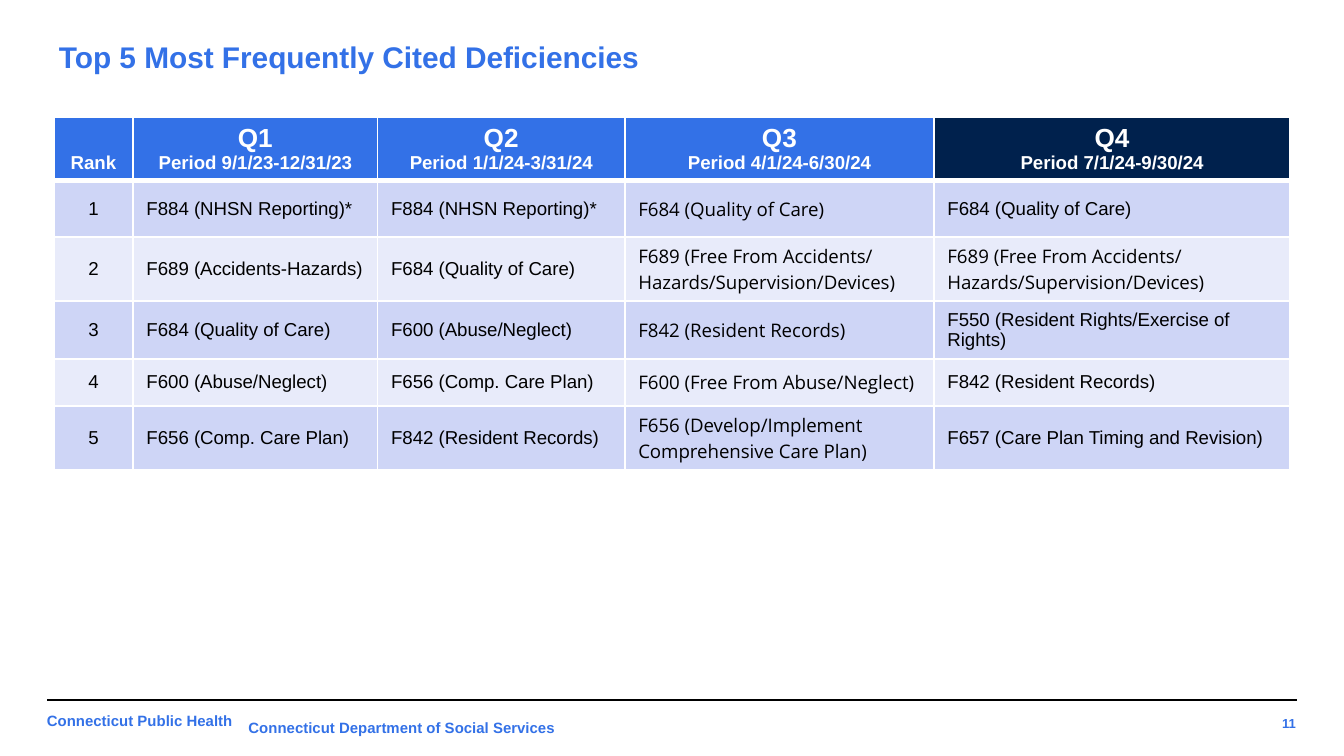
"""Build the slide on the most cited deficiencies by quarter."""
from lxml import etree
from pptx import Presentation
from pptx.dml.color import RGBColor
from pptx.enum.shapes import MSO_CONNECTOR
from pptx.enum.text import MSO_ANCHOR, PP_ALIGN
from pptx.oxml.ns import qn
from pptx.util import Inches, Pt

LEFT, CENTER, RIGHT = PP_ALIGN.LEFT, PP_ALIGN.CENTER, PP_ALIGN.RIGHT
TOP, MIDDLE, BOTTOM = MSO_ANCHOR.TOP, MSO_ANCHOR.MIDDLE, MSO_ANCHOR.BOTTOM
LINE = MSO_CONNECTOR.STRAIGHT


class Theme:
    """Colours, fonts and type sizes."""
    blue, navy, white, black = "3371E7", "00214D", "FFFFFF", "000000"
    head_fills = [blue] * 4 + [navy]
    bands = ["CED5F6", "E8EBFA"]
    font, alt = "Arial", "Open Sans"
    title, quarter, body, foot, page = 16, 14, 10, 8, 7


HEADS = [
    ["Rank"],
    ["Q1", "Period 9/1/23-12/31/23"],
    ["Q2", "Period 1/1/24-3/31/24"],
    ["Q3", "Period 4/1/24-6/30/24"],
    ["Q4", "Period 7/1/24-9/30/24"],
]
RANKS = [
    ["F884 (NHSN Reporting)*", "F884 (NHSN Reporting)*",
     "F684 (Quality of Care)", "F684 (Quality of Care)"],
    ["F689 (Accidents-Hazards)", "F684 (Quality of Care)",
     "F689 (Free From Accidents/ Hazards/Supervision/Devices)",
     "F689 (Free From Accidents/ Hazards/Supervision/Devices)"],
    ["F684 (Quality of Care)", "F600 (Abuse/Neglect)",
     "F842 (Resident Records)", "F550 (Resident Rights/Exercise of Rights)"],
    ["F600 (Abuse/Neglect)", "F656 (Comp. Care Plan)",
     "F600 (Free From Abuse/Neglect)", "F842 (Resident Records)"],
    ["F656 (Comp. Care Plan)", "F842 (Resident Records)",
     "F656 (Develop/Implement \nComprehensive Care Plan)",
     "F657 (Care Plan Timing and Revision)"],
]
ALT_CELLS = {(1, 3), (2, 3), (2, 4), (3, 3), (4, 3), (5, 3)}
WIDTHS = [0.59, 1.82, 1.84, 2.3, 2.65]
HEIGHTS = [0.27, 0.42, 0.27, 0.43, 0.35, 0.27]
FRAME = (0.4, 0.87, 9.2, 2.57)
# text, box, size, align, anchor, inset, wrap, spacing
LABELS = [
    ("11", (9.14, 5.26, 0.6, 0.25), Theme.page, RIGHT, MIDDLE, 0.1, True, 1),
    ("Connecticut Public Health", (0.25, 5.25, 3.28, 0.34), Theme.foot,
     LEFT, TOP, 0.1, True, 0.9),
    ("Top 5 Most Frequently Cited Deficiencies", (0.34, 0.26, 9.32, 0.33),
     Theme.title, LEFT, MIDDLE, 0.1, True, 1),
    ("Connecticut Department of Social Services", (1.75, 5.3, 2.51, 0.24),
     Theme.foot, LEFT, TOP, None, False, 1),
]


def style(para, size, color, bold, align, font=Theme.font):
    """Set the font and alignment of a paragraph."""
    para.alignment = align
    para.font.size, para.font.name, para.font.bold = Pt(size), font, bold
    para.font.color.rgb = RGBColor.from_string(color)


def label(slide, text, box, size, align, anchor, inset, wrap, spacing):
    """Add one bold blue text box."""
    frame = slide.shapes.add_textbox(*map(Inches, box)).text_frame
    frame.word_wrap, frame.vertical_anchor = wrap, anchor
    if inset is not None:
        frame.margin_left = frame.margin_right = Inches(inset)
        frame.margin_top = frame.margin_bottom = Inches(inset)
    frame.text = text
    para = frame.paragraphs[0]
    para.line_spacing = spacing
    style(para, size, Theme.blue, True, align)


def border(cell, **widths):
    """Draw white borders of the given point widths."""
    props = cell._tc.get_or_add_tcPr()
    for side, width in widths.items():
        line = etree.SubElement(props, qn(f"a:ln{side}"), w=str(Pt(width)))
        fill = etree.SubElement(line, qn("a:solidFill"))
        etree.SubElement(fill, qn("a:srgbClr"), val=Theme.white)


def paint(cell, fill, anchor, text):
    """Fill a cell, set its text and return its paragraphs."""
    cell.fill.solid()
    cell.fill.fore_color.rgb = RGBColor.from_string(fill)
    cell.vertical_anchor = anchor
    cell.text = text
    return cell.text_frame.paragraphs


def grid(slide):
    """Add the table of ranks by quarter."""
    shape = slide.shapes.add_table(
        len(HEIGHTS), len(WIDTHS), *map(Inches, FRAME))
    table = shape.table
    for col, width in zip(table.columns, WIDTHS):
        col.width = Inches(width)
    for row, height in zip(table.rows, HEIGHTS):
        row.height = Inches(height)
    shape.height = Inches(FRAME[3])
    for c, (lines, fill) in enumerate(zip(HEADS, Theme.head_fills)):
        cell = table.cell(0, c)
        border(cell, L=1, R=1, T=1, B=3)
        paras = paint(cell, fill, MIDDLE if c else BOTTOM, "\n".join(lines))
        for para in paras:
            size = Theme.quarter if para.text.startswith("Q") else Theme.body
            style(para, size, Theme.white, True, CENTER)
    for r, tags in enumerate(RANKS, 1):
        for c, text in enumerate([str(r)] + tags):
            cell = table.cell(r, c)
            border(cell, L=1, R=1, T=3 if r == 1 else 1, B=1)
            font = Theme.alt if (r, c) in ALT_CELLS else Theme.font
            for para in paint(cell, Theme.bands[(r - 1) % 2], MIDDLE, text):
                style(para, Theme.body, Theme.black, False,
                      LEFT if c else CENTER, font)


def main():
    """Build and save the deck."""
    deck = Presentation()
    deck.slide_width, deck.slide_height = Inches(10), Inches(10 * 9 / 16)
    slide = deck.slides.add_slide(deck.slide_layouts[6])
    rule = slide.shapes.add_connector(
        LINE, *map(Inches, (9.65, 5.21, 0.35, 5.21)))
    rule.line.color.rgb = RGBColor.from_string(Theme.black)
    rule.line.width = Pt(0.75)
    etree.SubElement(rule._element.spPr, qn("a:effectLst"))
    grid(slide)
    for item in LABELS:
        label(slide, *item)
    deck.save("out.pptx")


if __name__ == "__main__":
    main()
